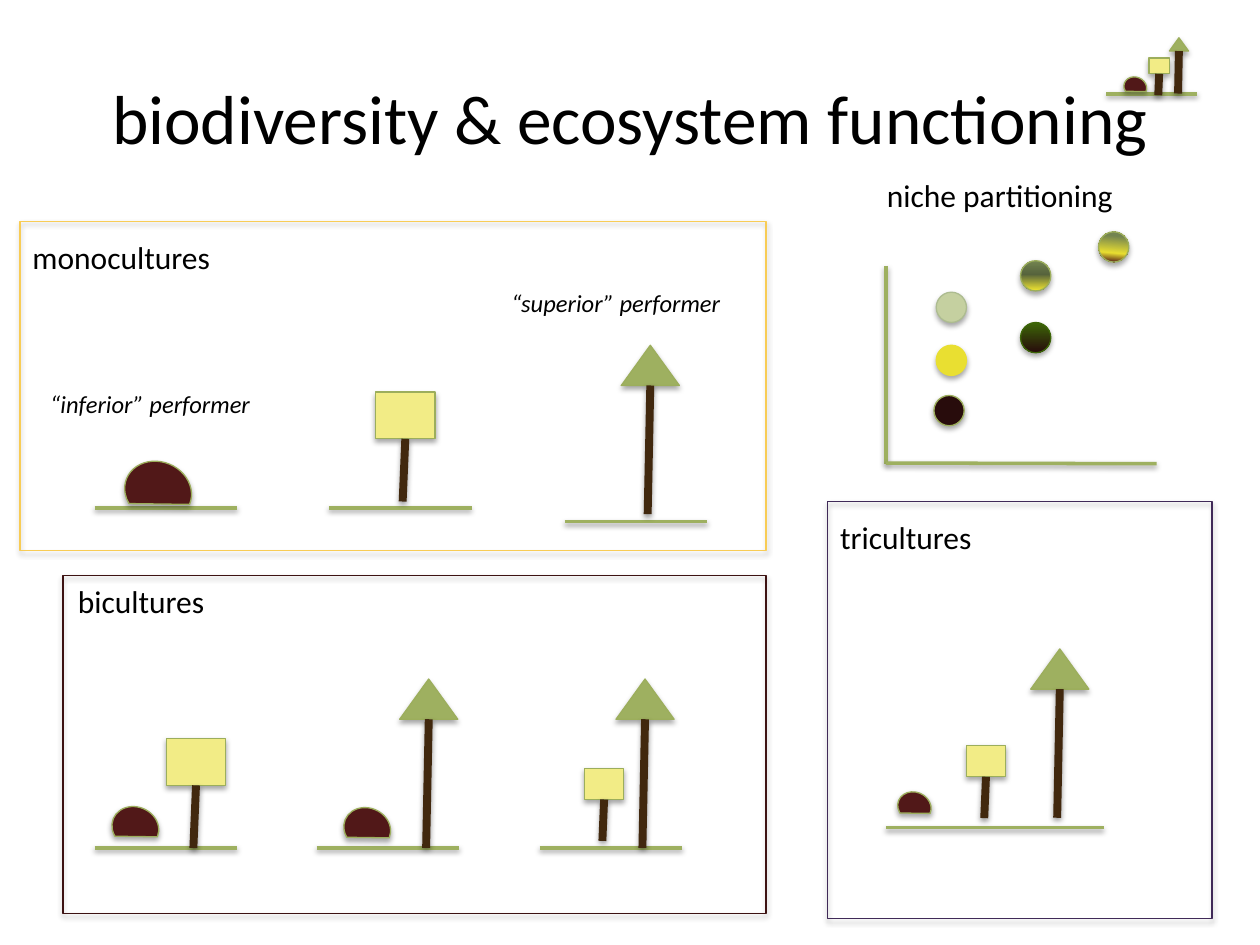
"""Build the biodiversity and ecosystem functioning slide."""
from lxml.etree import SubElement
from pptx import Presentation
from pptx.dml.color import RGBColor
from pptx.enum.shapes import MSO_CONNECTOR, MSO_SHAPE
from pptx.enum.text import MSO_ANCHOR, PP_ALIGN
from pptx.oxml.ns import qn
from pptx.util import Pt

COLORS = {
    "black": "000000", "white": "FFFFFF", "ground": "9EB060", "outline": "9CAE5C",
    "trunk": "41280E", "post": "F2EC86", "shrub": "511818", "amber": "F8CC55",
    "maroon": "3D1212", "purple": "402A58", "yellow": "E9DF31", "umber": "280C0C",
    "pale": "C5D0A0", "sage": "ADBC90", "moss": "738450", "olive": "56633C",
    "forest": "3C6507",
}
LABELS = [
    ("niche partitioning", 499.7, 97.2, 144.7, 18, False),
    ("monocultures", 11.5, 132.5, 117.4, 18, False),
    ("bicultures", 37.4, 329, 87.8, 18, False),
    ("tricultures", 473, 292.3, 90.7, 18, False),
    ("“inferior” performer", 21.6, 218.9, 133.2, 14, True),
    ("“superior” performer", 285.1, 161.3, 138.2, 14, True),
]
PANELS = [
    (11.5, 126.7, 426.3, 188, "amber"),
    (36, 329, 401.8, 193, "maroon"),
    (473, 286.5, 219.6, 238.3, "purple"),
]
GROUND_LINES = [
    (54, 290.2, 81.5), (188, 290.2, 81.5), (322.6, 298, 81.5),
    (54, 484.6, 81.5), (181, 484.6, 81.5), (308.4, 484.6, 81.5),
    (506.2, 473, 124.5), (632.2, 53.7, 51.8),
]
AXES = [(506.2, 152, 506.2, 265), (506.2, 264.6, 661, 265)]
DOT_SIZE = 17.3
DOTS = [
    (535, 197.3, "yellow", "yellow"),
    (533.7, 226, "umber", "outline"),
    (535, 167, "pale", "sage"),
    (583.2, 149, [(0, "white"), (1, "moss"), (45, "olive"), (97, "yellow")], "outline", 270),
    (583.2, 184.3, [(0, "forest"), (99, "umber"), (100, "white")], "forest", 270),
    (627.8, 132.5, [(0, "white"), (1, "moss"), (2, "shrub"), (32, "yellow"), (85, "moss")],
     "outline", 85),
]
SPECIES = {
    "shrub": dict(preset=MSO_SHAPE.CHORD, size=(33.8, 38.9), fill="shrub", rotation=112.4),
    "post": dict(preset=MSO_SHAPE.RECTANGLE, size=(34, 26.8), fill="post", reach=62.6),
    "tree": dict(preset=MSO_SHAPE.ISOSCELES_TRIANGLE, size=(33.2, 23), fill="ground",
                 reach=96.5),
}
PLANTS = [
    ("shrub", 73.4, 261.4, 1), ("post", 214.6, 224, 1), ("tree", 355, 197.3, 1),
    ("shrub", 65.5, 459.4, 0.7), ("post", 95, 422, 1),
    ("shrub", 198, 460, 0.7), ("tree", 228.4, 388, 1),
    ("post", 334, 439.2, 0.66), ("tree", 352, 388, 1),
    ("shrub", 514, 451.4, 0.5), ("post", 552.2, 426.2, 0.66), ("tree", 589, 370.8, 1),
    ("shrub", 643, 43.2, 0.34), ("post", 656.6, 33.1, 0.34), ("tree", 668.2, 21.6, 0.33),
]


def color(name):
    return RGBColor.from_string(COLORS[name])


def add_shadow(shape, opacity, distance):
    effects = SubElement(shape._element.spPr, qn("a:effectLst"))
    shadow = SubElement(effects, qn("a:outerShdw"), blurRad=str(Pt(3.1)),
                        dist=str(Pt(distance)), dir="5400000", rotWithShape="0")
    black = SubElement(shadow, qn("a:srgbClr"), val=COLORS["black"])
    SubElement(black, qn("a:alpha"), val=str(opacity * 1000))


def add_gradient(shape, stops, angle):
    shape.fill.gradient()
    shape.fill.gradient_angle = angle
    stop_list = shape._element.spPr.find(".//" + qn("a:gsLst"))
    for stop in list(stop_list):
        stop_list.remove(stop)
    for position, name in stops:
        stop = SubElement(stop_list, qn("a:gs"), pos=str(position * 1000))
        SubElement(stop, qn("a:srgbClr"), val=COLORS[name])


def add_figure(slide, preset, left, top, width, height, fill, line, angle=0, rotation=0):
    shape = slide.shapes.add_shape(preset, Pt(left), Pt(top), Pt(width), Pt(height))
    shape.rotation = rotation
    if fill is None:
        shape.fill.background()
    elif isinstance(fill, list):
        add_gradient(shape, fill, angle)
    else:
        shape.fill.solid()
        shape.fill.fore_color.rgb = color(fill)
    shape.line.color.rgb = color(line)
    shape.line.width = Pt(0.75)
    add_shadow(shape, 35, 1.8)
    return shape


def add_line(slide, x1, y1, x2, y2, name="ground", width=2):
    connector = slide.shapes.add_connector(
        MSO_CONNECTOR.STRAIGHT, Pt(x1), Pt(y1), Pt(x2), Pt(y2))
    connector.line.color.rgb = color(name)
    connector.line.width = Pt(width)
    add_shadow(connector, 38, 1.6)
    return connector


def add_plant(slide, name, left, top, scale):
    species = SPECIES[name]
    width, height = (length * scale for length in species["size"])
    crown = add_figure(slide, species["preset"], left, top, width, height, species["fill"],
                       "outline", rotation=species.get("rotation", 0))
    if "reach" in species:
        middle = left + width / 2
        trunk = add_line(slide, middle - 1.5 * scale, top + species["reach"] * scale,
                         middle, top + height, "trunk", 4.5)
        if name == "post":
            trunk.end_connect(crown, 2)


def add_text(slide, text, left, top, width, height, size, italic=False, wrap=False,
             align=PP_ALIGN.LEFT, anchor=MSO_ANCHOR.TOP):
    box = slide.shapes.add_textbox(Pt(left), Pt(top), Pt(width), Pt(height))
    frame = box.text_frame
    frame.word_wrap = wrap
    frame.vertical_anchor = anchor
    paragraph = frame.paragraphs[0]
    paragraph.alignment = align
    run = paragraph.add_run()
    run.text = text
    run.font.name = "Calibri"
    run.font.size = Pt(size)
    run.font.italic = italic
    run.font.color.rgb = color("black")


def main():
    presentation = Presentation()
    presentation.slide_width, presentation.slide_height = Pt(720), Pt(540)
    slide = presentation.slides.add_slide(presentation.slide_layouts[6])
    add_text(slide, "biodiversity & ecosystem functioning", 36, 21.6, 648, 90, 39.6,
             wrap=True, align=PP_ALIGN.CENTER, anchor=MSO_ANCHOR.MIDDLE)
    for left, top, width, height, line in PANELS:
        add_figure(slide, MSO_SHAPE.RECTANGLE, left, top, width, height, None, line)
    for left, y, length in GROUND_LINES:
        add_line(slide, left, y, left + length, y)
    for axis in AXES:
        add_line(slide, *axis)
    for left, top, *style in DOTS:
        add_figure(slide, MSO_SHAPE.OVAL, left, top, DOT_SIZE, DOT_SIZE, *style)
    for plant in PLANTS:
        add_plant(slide, *plant)
    for text, left, top, width, size, italic in LABELS:
        add_text(slide, text, left, top, width, size * 1.2 + 7.2, size, italic=italic)
    presentation.save("out.pptx")


if __name__ == "__main__":
    main()
